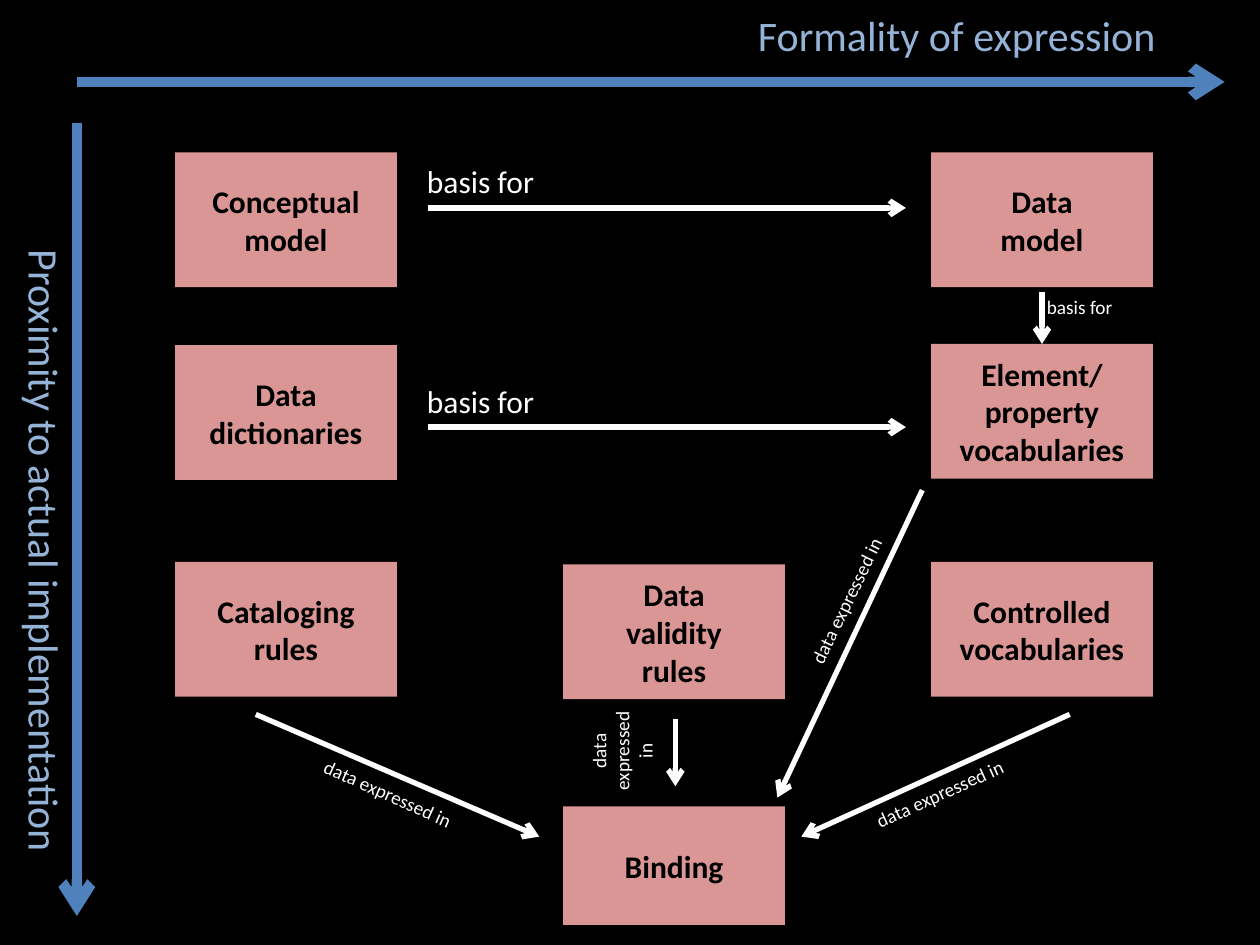
"""Build a slide that maps metadata components by formality and implementation."""
from lxml import etree
from pptx import Presentation
from pptx.dml.color import RGBColor
from pptx.enum import shapes, text
from pptx.oxml.ns import qn
from pptx.util import Inches, Pt

COLORS = {"background": "000000", "axis": "4F81BD", "axis_text": "95B3D7",
          "box": "D99694", "box_text": "000000", "flow": "FFFFFF"}
FONT = "Calibri"
BOX_W, BOX_H = 1.76, 1.07
LEFT, MIDDLE, RIGHT = 1.39, 4.47, 7.39
LEFT_ALIGN, CENTER, RIGHT_ALIGN = (
    text.PP_ALIGN.LEFT, text.PP_ALIGN.CENTER, text.PP_ALIGN.RIGHT)

BOXES = [
    ("Conceptual model", LEFT, 1.21, BOX_H),
    ("Data\nmodel", RIGHT, 1.21, BOX_H),
    ("Data dictionaries", LEFT, 2.74, BOX_H),
    ("Element/property vocabularies", RIGHT, 2.73, BOX_H),
    ("Cataloging rules", LEFT, 4.46, BOX_H),
    ("Controlled vocabularies", RIGHT, 4.46, BOX_H),
    ("Data\nvalidity\nrules", MIDDLE, 4.48, BOX_H),
    ("Binding", MIDDLE, 6.4, 0.94),
]
AXES = [(0.61, 0.65, 9.72, 0.65), (0.61, 0.98, 0.61, 7.27)]
FLOWS = [
    (3.4, 1.65, 7.19, 1.65),
    (3.4, 3.39, 7.19, 3.39),
    (2.03, 5.67, 4.28, 6.64),
    (8.49, 5.67, 6.36, 6.64),
    (5.36, 5.71, 5.36, 6.24),
    (7.32, 3.89, 6.17, 6.33),
]
MODEL_FLOW = (RIGHT + BOX_W / 2, 2.32, RIGHT + BOX_W / 2, 2.73)
AXIS_LABELS = [
    ("Formality of expression", (5.14, 0.03, 4.13, 0.5), False),
    ("Proximity to actual implementation", (0, 1.71, 0.61, 5.15), True),
]
FLOW_LABELS = [
    ("basis for", (3.29, 1.24, 1.45, 0.4), 18, 0, LEFT_ALIGN),
    ("basis for", (3.29, 2.98, 1.45, 0.4), 18, 0, LEFT_ALIGN),
    ("basis for", (8.21, 2.29, 0.9, 0.29), 11, 0, LEFT_ALIGN),
    ("data expressed in", (2.43, 6.19, 1.45, 0.29), 11, 24, LEFT_ALIGN),
    ("data expressed in", (6.81, 6.12, 1.45, 0.29), 11, 335.6, LEFT_ALIGN),
    ("data expressed in", (6.03, 4.55, 1.45, 0.29), 11, 295.9, LEFT_ALIGN),
    ("data expressed in", (4.5, 5.63, 0.88, 0.66), 11, 270, CENTER),
]


def rgb(name):
    return RGBColor.from_string(COLORS[name])


def write(sp, words, size, color, align, bold=False):
    tf = sp.text_frame
    tf.word_wrap = True
    p = tf.paragraphs[0]
    p.alignment = align
    for i, line in enumerate(words.split("\n")):
        if i:
            p.add_line_break()
        r = p.add_run()
        r.text = line
        r.font.name, r.font.size, r.font.bold = FONT, Pt(size), bold
        r.font.color.rgb = rgb(color)
    return tf


def add_box(s, words, x, y, h):
    sp = s.shapes.add_shape(shapes.MSO_SHAPE.RECTANGLE,
                            *map(Inches, (x, y, BOX_W, h)))
    sp.shadow.inherit = False
    sp.fill.solid()
    sp.fill.fore_color.rgb = rgb("box")
    sp.line.fill.background()
    tf = write(sp, words, 18, "box_text", CENTER, bold=True)
    tf.vertical_anchor = text.MSO_ANCHOR.MIDDLE
    return sp


def add_label(s, words, place, size, color, align, rotation=0):
    sp = s.shapes.add_textbox(*map(Inches, place))
    sp.rotation = rotation
    tf = write(sp, words, size, color, align)
    tf.auto_size = text.MSO_AUTO_SIZE.SHAPE_TO_FIT_TEXT
    return sp


def add_arrow(s, ends, color, width):
    sp = s.shapes.add_connector(shapes.MSO_CONNECTOR.STRAIGHT,
                                *map(Inches, ends))
    sp.line.color.rgb = rgb(color)
    sp.line.width = Pt(width)
    etree.SubElement(sp.line._get_or_add_ln(), qn("a:tailEnd"), type="arrow")
    etree.SubElement(sp._element.spPr, qn("a:effectLst"))
    return sp


def main():
    prs = Presentation()
    prs.slide_width, prs.slide_height = Inches(10), Inches(7.5)
    s = prs.slides.add_slide(prs.slide_layouts[6])
    s.background.fill.solid()
    s.background.fill.fore_color.rgb = rgb("background")

    for ends in AXES:
        add_arrow(s, ends, "axis", 6)
    for words, place, vertical in AXIS_LABELS:
        sp = add_label(s, words, place, 24, "axis_text", RIGHT_ALIGN)
        if vertical:
            sp.text_frame._txBody.bodyPr.set("vert", "vert")
    boxes = {box[0]: add_box(s, *box) for box in BOXES}
    for ends in FLOWS:
        add_arrow(s, ends, "flow", 3)
    model_arrow = add_arrow(s, MODEL_FLOW, "flow", 3)
    model_arrow.end_connect(boxes["Element/property vocabularies"], 0)
    for words, place, size, rotation, align in FLOW_LABELS:
        add_label(s, words, place, size, "flow", align, rotation)
    prs.save("out.pptx")


if __name__ == "__main__":
    main()
